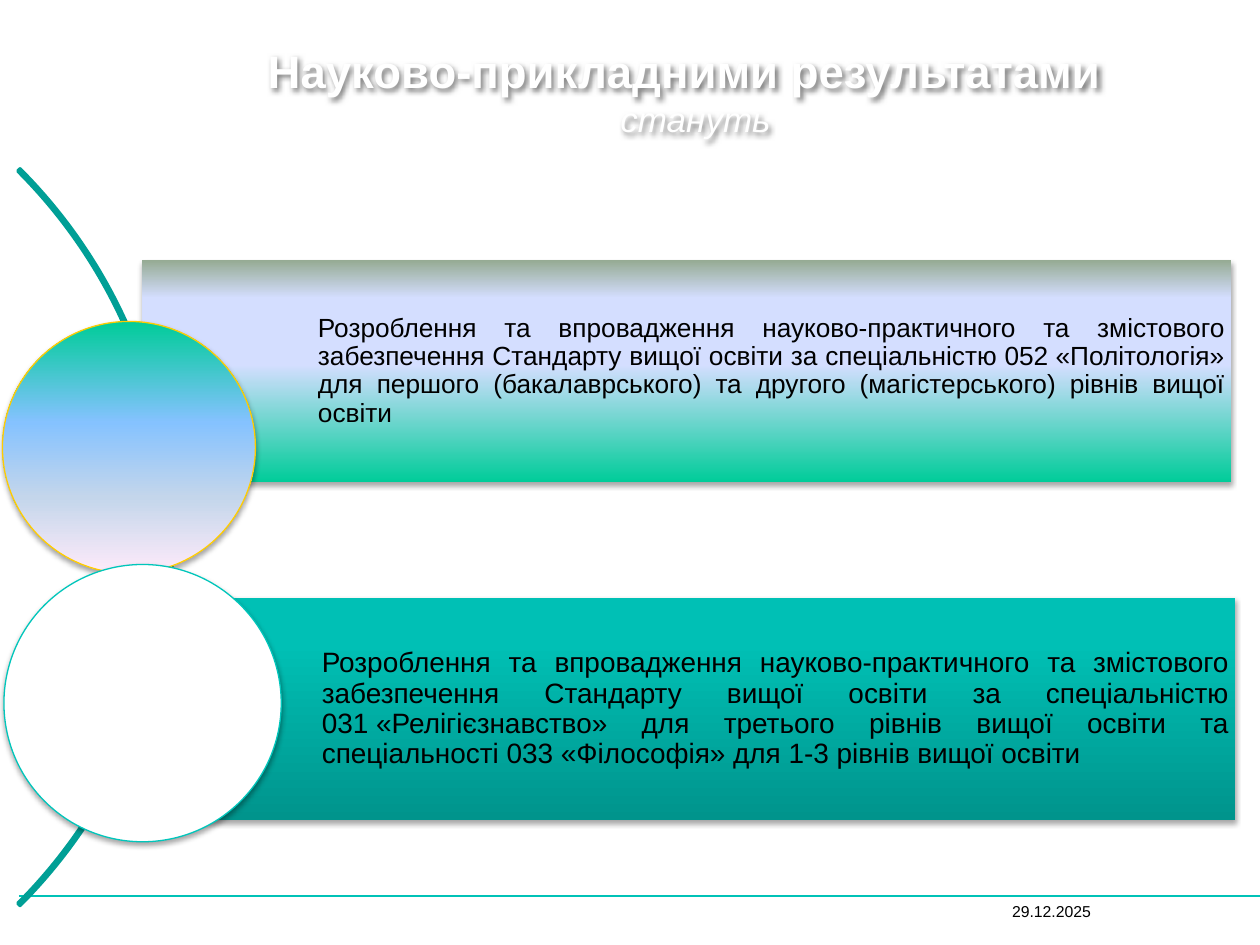
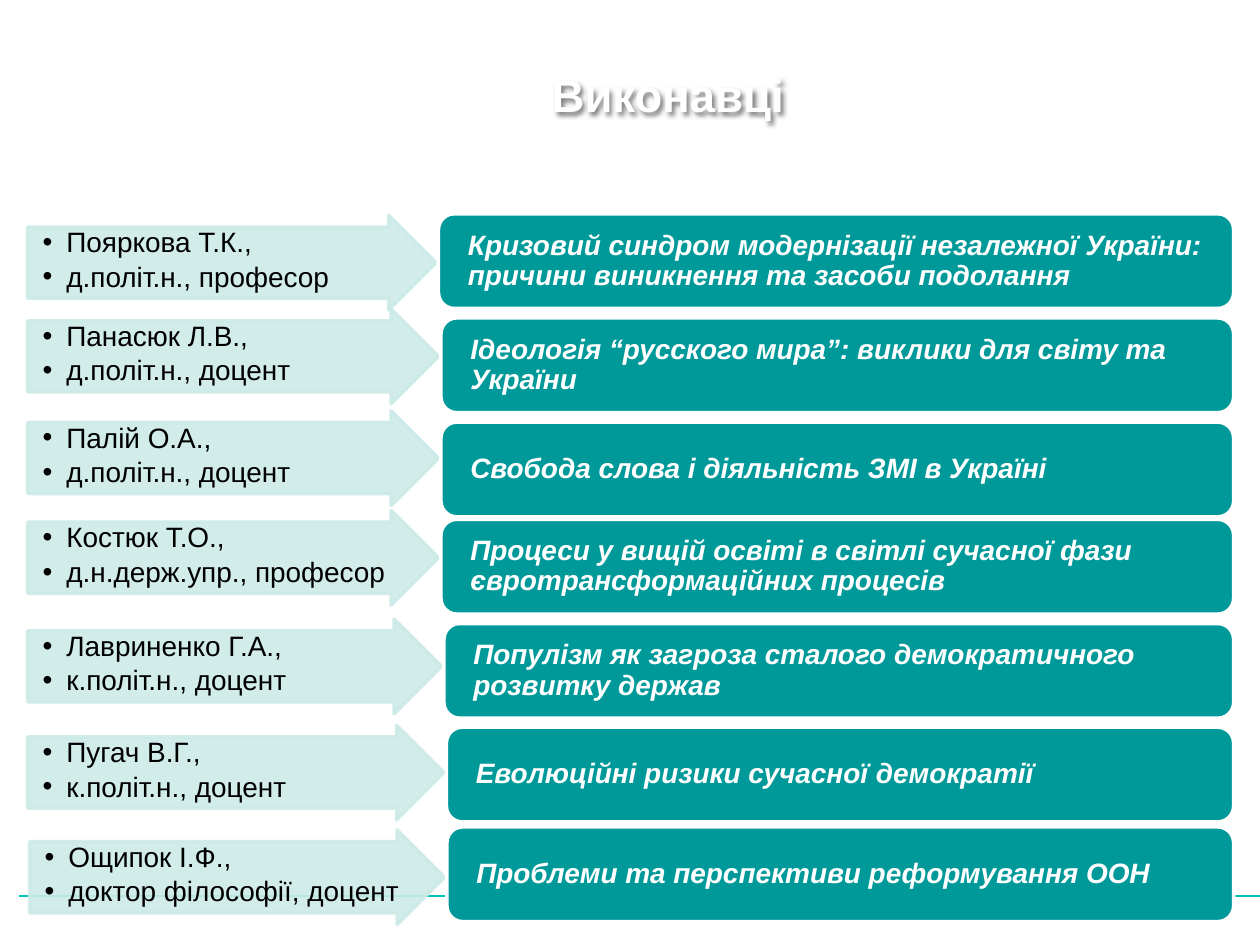
from dataclasses import dataclass

from lxml import etree
from pptx import Presentation
from pptx.dml.color import RGBColor
from pptx.enum.shapes import MSO_CONNECTOR, MSO_SHAPE
from pptx.enum.text import MSO_ANCHOR, PP_ALIGN
from pptx.oxml.ns import qn
from pptx.util import Cm, Pt

RECTANGLE = MSO_SHAPE.RECTANGLE
ELLIPSE = MSO_SHAPE.OVAL
ARROW = MSO_SHAPE.RIGHT_ARROW
ROUNDED = MSO_SHAPE.ROUNDED_RECTANGLE
BLOCK_ARC = MSO_SHAPE.BLOCK_ARC
STRAIGHT = MSO_CONNECTOR.STRAIGHT
TOP, MIDDLE, BOTTOM = MSO_ANCHOR.TOP, MSO_ANCHOR.MIDDLE, MSO_ANCHOR.BOTTOM
LEFT, CENTER, RIGHT, JUSTIFY = PP_ALIGN.LEFT, PP_ALIGN.CENTER, PP_ALIGN.RIGHT, PP_ALIGN.JUSTIFY


@dataclass(frozen=True)
class Theme:
    font: str = "Arial"
    white: str = "FFFFFF"
    black: str = "000000"
    rule: str = "00C2B7"
    arc: str = "009F96"
    gold: str = "FFCC00"
    aqua: str = "00C6BB"
    topic: str = "009999"
    person: str = "CCEAE7"
    title_size: float = 26
    subtitle_size: float = 20
    body_size: float = 16
    compact_size: float = 15
    date_size: float = 9
    meadow: tuple = ((0, "00CC99"), (53, "D4DEFF"), (83, "D4DEFF"), (100, "96AB94"))
    teal: tuple = ((0, "00948C"), (80, "00C0B5"), (100, "00C1B6"))
    dawn: tuple = ((0, "00CC99"), (40, "85C2FF"), (70, "C4D6EB"), (100, "FFEBFA"))


THEME = Theme()
TITLE_WIDTH = 20.45
DEFAULT_INSETS = (0.25, 0.13, 0.25, 0.13)
HARD_SPACE = chr(160)

RESULTS = [
    {
        "bar": (2.87, 5.25, 21.95, 4.47),
        "fill": THEME.meadow,
        "size": THEME.compact_size,
        "text": "Розроблення та впровадження науково-практичного та змістового забезпечення "
                f"Стандарту вищої освіти за спеціальністю 052{HARD_SPACE}«Політологія» для першого "
                "(бакалаврського) та другого (магістерського) рівнів вищої освіти",
        "disc": (0.05, 6.48, 5.1, 5.08),
        "disc_fill": THEME.dawn,
        "disc_line": THEME.gold,
    },
    {
        "bar": (2.95, 12.06, 21.95, 4.47),
        "fill": THEME.teal,
        "size": THEME.body_size,
        "text": "Розроблення та впровадження науково-практичного та змістового забезпечення "
                f"Стандарту вищої освіти за спеціальністю 031{HARD_SPACE}«Релігієзнавство» для третього "
                "рівнів вищої освіти та спеціальності 033 «Філософія» для 1-3 рівнів вищої освіти",
        "disc": (0.08, 11.38, 5.59, 5.59),
        "disc_fill": THEME.white,
        "disc_line": THEME.aqua,
    },
]

PERFORMERS = [
    (0.56, 4.34, 8.84, 4.31, "Пояркова Т.К.,", "д.політ.н., професор",
     "Кризовий синдром модернізації незалежної України: причини виникнення та засоби подолання"),
    (0.56, 6.23, 8.89, 6.41, "Панасюк Л.В.,", "д.політ.н., доцент",
     "Ідеологія “русского мира”: виклики для світу та України"),
    (0.56, 8.28, 8.89, 8.51, "Палій О.А.,", "д.політ.н., доцент",
     "Свобода слова і діяльність ЗМІ в Україні"),
    (0.56, 10.29, 8.89, 10.47, "Костюк Т.О.,", "д.н.держ.упр., професор",
     "Процеси у вищій освіті в світлі сучасної фази євротрансформаційних процесів"),
    (0.56, 12.48, 8.95, 12.57, "Лавриненко Г.А.,", "к.політ.н., доцент",
     "Популізм як загроза сталого демократичного розвитку держав"),
    (0.56, 14.62, 9, 14.66, "Пугач В.Г.,", "к.політ.н., доцент",
     "Еволюційні ризики сучасної демократії"),
    (0.6, 16.73, 9.01, 16.67, "Ощипок І.Ф.,", "доктор філософії, доцент",
     "Проблеми та перспективи реформування ООН"),
]


def rgb(color):
    return RGBColor.from_string(color)


def set_line(line, color, width):
    line.color.rgb = rgb(color)
    line.width = Pt(width)


def set_gradient(fill, properties, stops, angle):
    fill.gradient()
    gradient = properties.find(qn("a:gradFill"))
    for child in list(gradient):
        gradient.remove(child)
    stop_list = etree.SubElement(gradient, qn("a:gsLst"))
    for position, color in stops:
        stop = etree.SubElement(stop_list, qn("a:gs"), pos=str(position * 1000))
        etree.SubElement(stop, qn("a:srgbClr"), val=color)
    etree.SubElement(gradient, qn("a:lin"), ang=str(angle * 60000), scaled="0")


def cast_shadow(shape, blur, distance, angle, opacity):
    effects = shape.element.spPr.find(qn("a:effectLst"))
    shadow = etree.SubElement(effects, qn("a:outerShdw"), blurRad=str(Pt(blur)),
                              dist=str(Pt(distance)), dir=str(angle * 60000),
                              algn="ctr", rotWithShape="0")
    color = etree.SubElement(shadow, qn("a:srgbClr"), val=THEME.black)
    etree.SubElement(color, qn("a:alpha"), val=str(opacity * 1000))


def add_preset(slide, preset, box, fill=None, line=None, line_width=0.75, angle=0):
    shape = slide.shapes.add_shape(preset, *map(Cm, box))
    shape.shadow.inherit = False
    if fill is None:
        shape.fill.background()
    elif isinstance(fill, tuple):
        set_gradient(shape.fill, shape.element.spPr, fill, angle)
    else:
        shape.fill.solid()
        shape.fill.fore_color.rgb = rgb(fill)
    if line:
        set_line(shape.line, line, line_width)
    else:
        shape.line.fill.background()
    return shape


def frame_text(shape, anchor, insets=DEFAULT_INSETS):
    frame = shape.text_frame
    frame.word_wrap = True
    frame.vertical_anchor = anchor
    (frame.margin_left, frame.margin_top,
     frame.margin_right, frame.margin_bottom) = map(Cm, insets)
    return frame


def add_run(paragraph, text, size, color, bold=False, italic=False):
    run = paragraph.add_run()
    run.text = text
    font = run.font
    font.name, font.size, font.bold, font.italic = THEME.font, Pt(size), bold, italic
    font.color.rgb = rgb(color)


def add_footer_rule(slide):
    rule = slide.shapes.add_connector(STRAIGHT, Cm(0.38), Cm(18.06), Cm(25.4), Cm(18.06))
    set_line(rule.line, THEME.rule, 0.75)
    etree.SubElement(rule.element.spPr, qn("a:effectLst"))


def add_date(slide, box, date):
    footer = slide.shapes.add_textbox(*map(Cm, box))
    paragraph = frame_text(footer, BOTTOM).paragraphs[0]
    paragraph.alignment = RIGHT
    add_run(paragraph, date, THEME.date_size, THEME.black)


def add_title(slide, left, top, height, heading, subtitle=None):
    title = slide.shapes.add_textbox(Cm(left), Cm(top), Cm(TITLE_WIDTH), Cm(height))
    title.shadow.inherit = False
    cast_shadow(title, 3, 1.5, 45, 50)
    paragraph = frame_text(title, BOTTOM).paragraphs[0]
    paragraph.alignment = CENTER
    add_run(paragraph, heading, THEME.title_size, THEME.white, bold=True)
    if subtitle:
        paragraph.add_line_break()
        add_run(paragraph, subtitle, THEME.subtitle_size, THEME.white, italic=True)


def add_arc(slide, left, top, diameter):
    arc = add_preset(slide, BLOCK_ARC, (left, top, diameter, diameter),
                     line=THEME.arc, line_width=2)
    for index, value in enumerate((189, 27, 0.003)):
        arc.adjustments[index] = value


def add_result(slide, result):
    bar = add_preset(slide, RECTANGLE, result["bar"], result["fill"], angle=270)
    paragraph = frame_text(bar, MIDDLE, (3.54, 0.1, 0.12, 0.1)).paragraphs[0]
    paragraph.alignment = JUSTIFY
    paragraph.line_spacing = 0.9
    add_run(paragraph, result["text"], result["size"], THEME.black)
    disc = add_preset(slide, ELLIPSE, result["disc"], result["disc_fill"],
                      result["disc_line"], angle=90)
    for part in (bar, disc):
        cast_shadow(part, 3.1, 1.8, 90, 35)


def add_person(slide, box, lines):
    arrow = add_preset(slide, ARROW, box, THEME.person, THEME.person, 2)
    arrow.adjustments[0], arrow.adjustments[1] = 0.75, 0.5
    for color in arrow.element.spPr.iter(qn("a:srgbClr")):
        etree.SubElement(color, qn("a:alpha"), val="90000")
    frame = frame_text(arrow, TOP, (0.3, 0.03, 0.03, 0.03))
    for index, line in enumerate(lines):
        paragraph = frame.add_paragraph() if index else frame.paragraphs[0]
        properties = paragraph._p.get_or_add_pPr()
        properties.set("marL", str(Cm(0.48)))
        properties.set("indent", str(Cm(-0.48)))
        etree.SubElement(properties, qn("a:buFont"), typeface=THEME.font)
        etree.SubElement(properties, qn("a:buChar"), char="•")
        paragraph.alignment = LEFT
        paragraph.line_spacing = 0.9
        paragraph.space_after = Pt(2.4)
        paragraph.font.size = Pt(THEME.body_size)
        add_run(paragraph, line, THEME.body_size, THEME.black)


def add_topic(slide, box, text):
    topic = add_preset(slide, ROUNDED, box, THEME.topic, THEME.white, 2)
    paragraph = frame_text(topic, MIDDLE, (0.5, 0.08, 0.18, 0.08)).paragraphs[0]
    paragraph.alignment = LEFT
    paragraph.line_spacing = 0.9
    add_run(paragraph, text, THEME.body_size, THEME.white, bold=True, italic=True)


def build_results(slide):
    add_footer_rule(slide)
    add_date(slide, (19.45, 17.68, 2.79, 1.02), "29.12.2025")
    add_title(slide, 3.7, 0.18, 2.77, "Науково-прикладними результатами ", " стануть")
    add_arc(slide, -17.52, 0.33, 21)
    for result in RESULTS:
        add_result(slide, result)


def build_performers(slide):
    row_height, right_edge, gap = 1.91, 24.87, 0.05
    add_footer_rule(slide)
    add_title(slide, 3.24, 0.53, 2.06, "Виконавці")
    for left, person_top, topic_left, topic_top, name, position, topic in PERFORMERS:
        add_person(slide, (left, person_top, topic_left - gap - left, row_height),
                   (name, position))
        add_topic(slide, (topic_left, topic_top, right_edge - topic_left, row_height), topic)


def main():
    deck = Presentation()
    deck.slide_width, deck.slide_height = Cm(25.4), Cm(19.05)
    blank = deck.slide_layouts[6]
    for build in (build_results, build_performers):
        build(deck.slides.add_slide(blank))
    deck.save("out.pptx")


if __name__ == "__main__":
    main()
